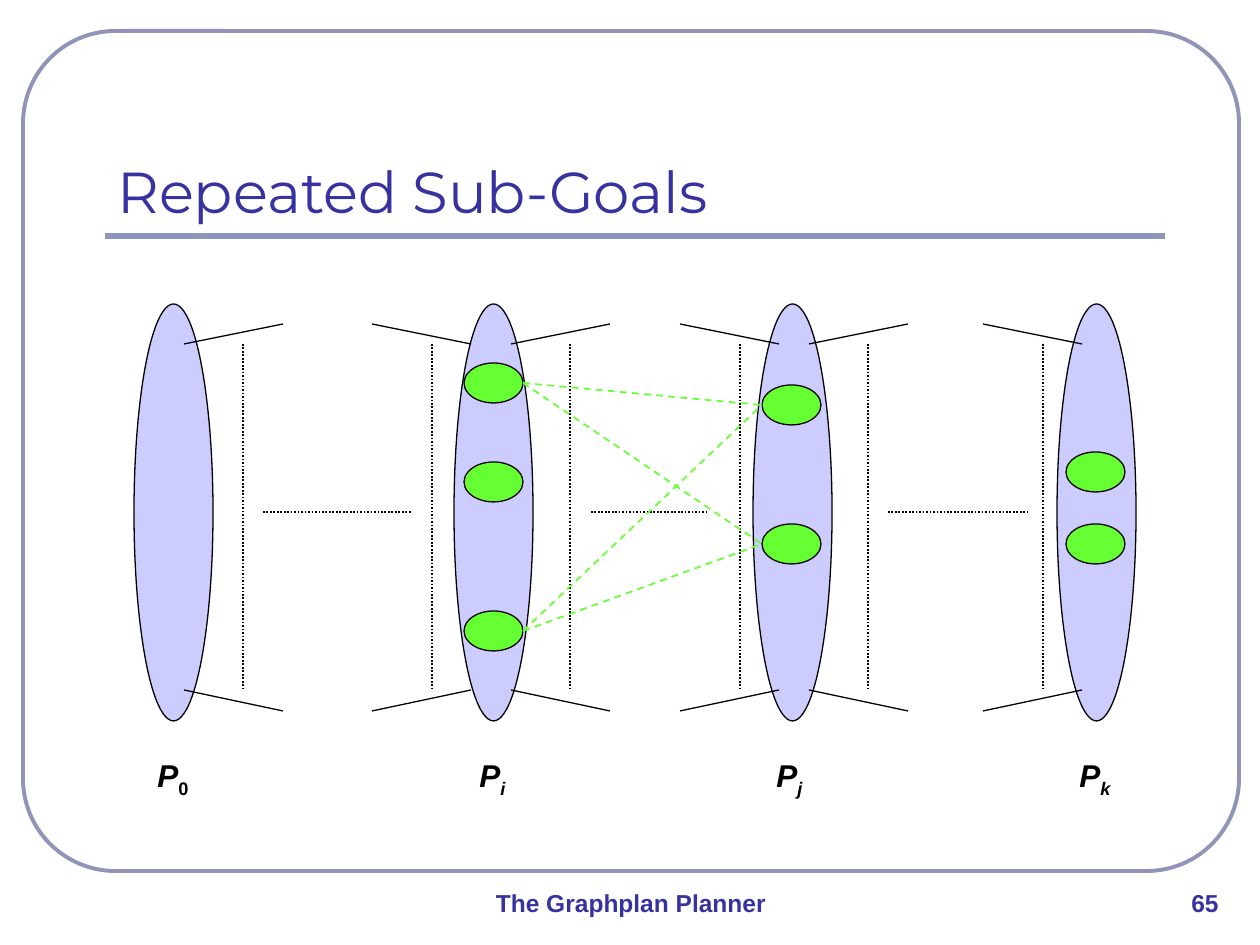
from itertools import product

from pptx import Presentation
from pptx.dml.color import RGBColor as RGB
from pptx.enum.dml import MSO_LINE as Dash
from pptx.enum.shapes import MSO_CONNECTOR as Conn, MSO_SHAPE as Geo
from pptx.enum.text import MSO_ANCHOR as Anchor, PP_ALIGN as Align
from pptx.oxml.ns import qn
from pptx.util import Emu, Pt
from lxml.etree import SubElement

SCALE = 914400 / 126
COLORS = {"frame": "9094B8", "text": "3732A0", "level": "CCCCFF",
          "goal": "66FF33", "ink": "000000"}


def px(*nums):
    return [Emu(round(n * SCALE)) for n in nums]


class Board:
    """Style and current slide, with a method for each kind of element."""

    def __init__(self, deck):
        self.slide = deck.slides.add_slide(deck.slide_layouts[6])
        self.shapes = self.slide.shapes

    def color(self, name):
        return RGB.from_string(COLORS[name])

    def stroke(self, line, color, width, dash=None):
        line.color.rgb = self.color(color)
        line.width = Pt(width)
        if dash:
            line.dash_style = dash

    def shape(self, geo, box, fill=None, line="ink", width=0.75):
        shape = self.shapes.add_shape(geo, *px(*box))
        shape.shadow.inherit = False
        if fill:
            shape.fill.solid()
            shape.fill.fore_color.rgb = self.color(fill)
        else:
            shape.fill.background()
        self.stroke(shape.line, line, width)
        return shape

    def line(self, start, end, color="ink", width=0.75, dash=None):
        line = self.shapes.add_connector(Conn.STRAIGHT, *px(*start, *end))
        SubElement(line._element.spPr, qn("a:effectLst"))
        self.stroke(line.line, color, width, dash)

    def dots(self, start, end):
        self.line(start, end, width=1, dash=Dash.ROUND_DOT)

    def text(self, box, words, size, font="Arial", color="text", bold=True,
             align=Align.CENTER, anchor=Anchor.TOP, wrap=True):
        frame = self.shapes.add_textbox(*px(*box)).text_frame
        frame.word_wrap = wrap
        frame.vertical_anchor = anchor
        para = frame.paragraphs[0]
        para.alignment = align
        para.font.name, para.font.size, para.font.bold = font, Pt(size), bold
        para.font.color.rgb = self.color(color)
        para.add_run().text = words
        return para

    def label(self, left, sub):
        para = self.text((left, 750, 58, 50), "P", 18, color="ink",
                         align=Align.LEFT, wrap=False)
        run = para.add_run()
        run.text = sub
        run.font._element.set("baseline", "-25000")
        para.runs[0].font.italic = True
        run.font.italic = sub.isalpha()

    def fan(self, x, side):
        for near, far in ((344, 324), (690, 711)):
            self.line((x, near), (x + side * 99, far))
        gap = 59 if side > 0 else -39
        self.dots((x + gap, 344), (x + gap, 690))

    def level(self, left, sub, shift, before, after):
        self.shape(Geo.OVAL, (left, 304, 79, 417), "level")
        self.label(left + shift, sub)
        if before:
            self.fan(before, -1)
        if after:
            self.fan(after, 1)

    def goal(self, left, mid):
        self.shape(Geo.OVAL, (left, mid - 20, 59, 40), "goal")


def main():
    deck = Presentation()
    deck.slide_width, deck.slide_height = px(1260, 945)
    board = Board(deck)

    frame = board.shape(Geo.ROUNDED_RECTANGLE, (23, 31, 1216, 840),
                        line="frame", width=2.25)
    frame.adjustments[0] = 0.11
    board.line((105, 236), (1165, 236), "frame", 3)
    board.text((105, 73, 1061, 158), "Repeated Sub-Goals", 33, "Montserrat",
               bold=False, align=Align.LEFT, anchor=Anchor.BOTTOM)
    board.text((333, 882, 596, 63), "The Graphplan Planner", 14)
    board.text((1155, 882, 100, 63), "65", 14)

    for level in ((134, "0", 11, None, 184), (454, "i", 13, 471, 511),
                  (753, "j", 11, 779, 809), (1057, "k", 10, 1082, None)):
        board.level(*level)
    for start, end in ((263, 412), (591, 709), (888, 1027)):
        board.dots((start, 512), (end, 512))

    goals = {464: (383, 482, 631), 762: (405, 544), 1066: (472, 544)}
    for left, mids in goals.items():
        for mid in mids:
            board.goal(left, mid)
    for start, end in product((383, 631), goals[762]):
        board.line((523, start), (762, end), "goal", 1, Dash.DASH)

    deck.save("out.pptx")


if __name__ == "__main__":
    main()
